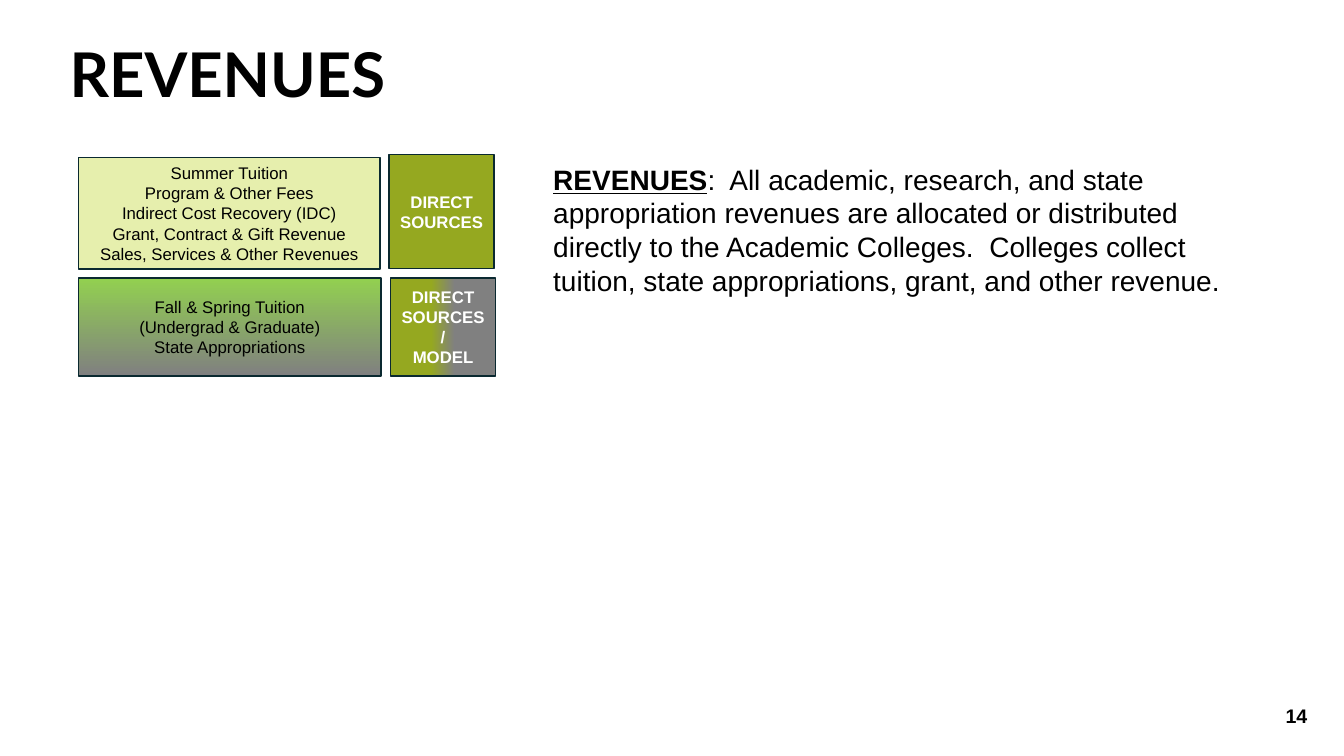
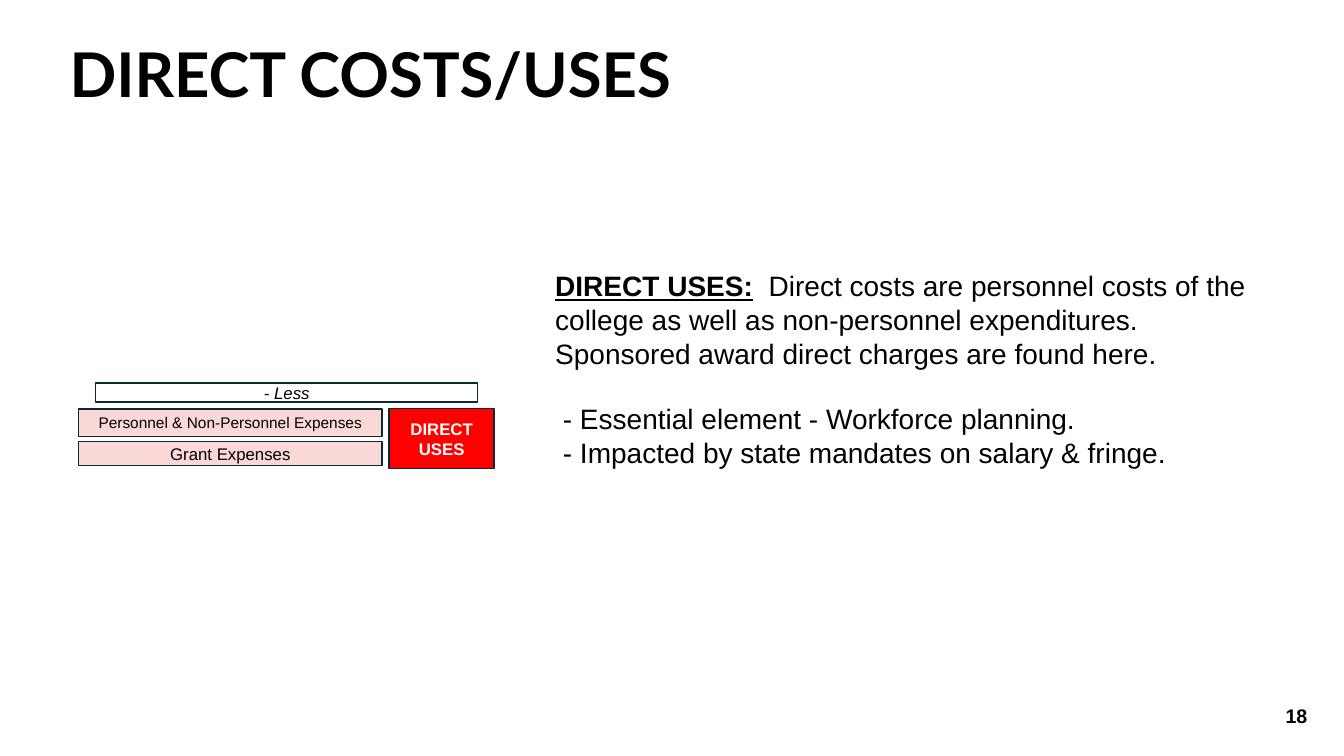
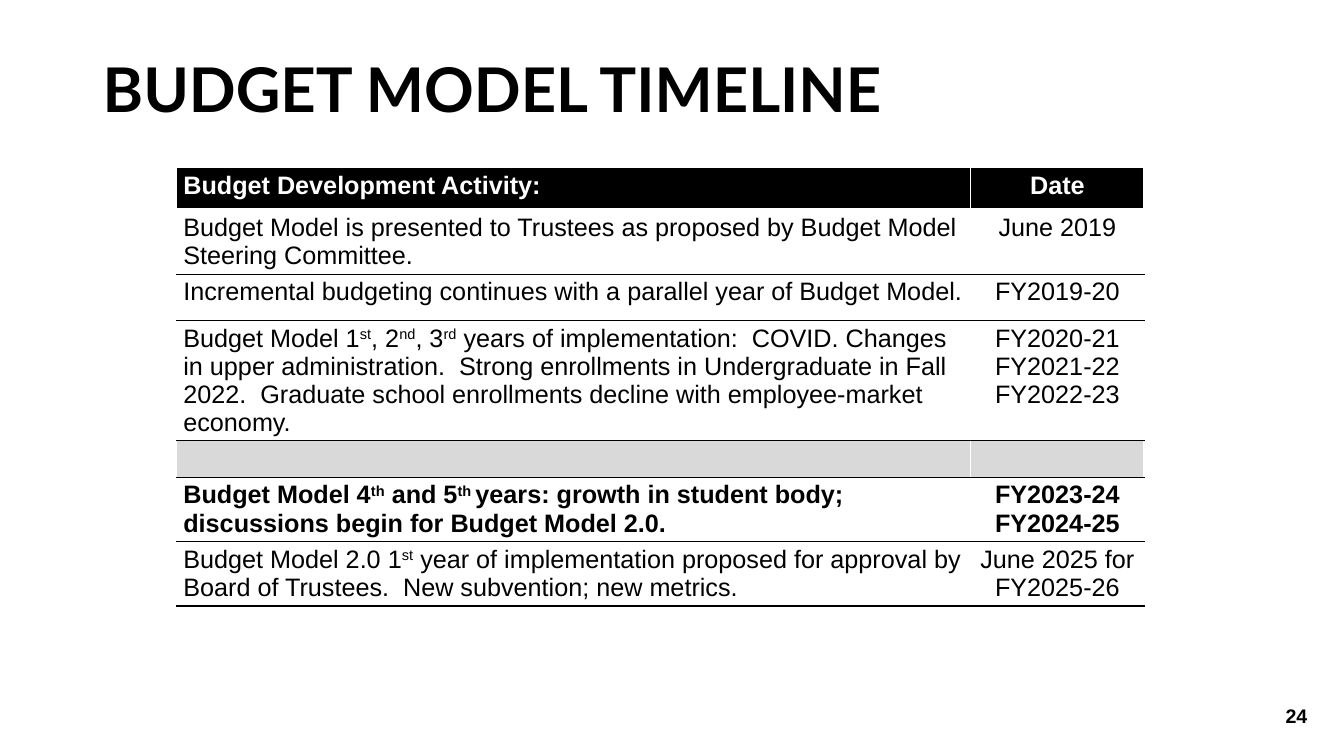
"""Builds three slides on a university budget model: revenues, direct costs and timeline."""
from lxml.etree import SubElement
from pptx import Presentation
from pptx.dml.color import RGBColor
from pptx.enum.shapes import MSO_SHAPE
from pptx.enum.text import MSO_ANCHOR, MSO_AUTO_SIZE, PP_ALIGN
from pptx.oxml.ns import qn
from pptx.util import Pt

COLORS = {
    "black": "000000", "white": "FFFFFF", "outline": "0A2930", "olive": "95A820",
    "pale_green": "E6EFAD", "green": "92D050", "gray": "808080", "red": "FF0000",
    "pink": "F9D8D7", "spacer": "D9D9D9",
}
TITLE = {"size": Pt(44), "name": "Lato", "bold": True}
PAGE_NUMBER = {"size": Pt(14), "bold": True}
BODY = {"size": Pt(20)}
LEAD = {"bold": True, "underline": True}
SOURCE = {"size": Pt(12)}
SMALL = {"size": Pt(11)}
LESS = {"size": Pt(12), "italic": True}
TAG = {"size": Pt(12), "bold": True, "color": "white"}
CELL = {"size": Pt(18)}
STRONG = {"size": Pt(18), "bold": True}
HEADER = {"size": Pt(18), "bold": True, "color": "white"}
SUPERSCRIPT = {"baseline": "30000"}

DOWNWARD = (270, ("green", 0), ("gray", 1))
RIGHTWARD = (0, ("olive", 0.39), ("gray", 0.61))

TITLE_BOX = (42.5, 32.4, 828, 46.1)
TIMELINE_TITLE_BOX = (66.2, 35.3, 828, 61.2)
PAGE_BOX = (725, 496.8, 216, 28.8)
SOURCE_LEFT, TAG_LEFT, TAG_WIDTH = 56.2, 278, 75

DIAGRAM_SLIDES = [
    {
        "title": "REVENUES", "page": "14",
        "boxes": [
            ((SOURCE_LEFT, 112.3, 215.3, 79.9), "pale_green", SOURCE,
             ["Summer Tuition", "Program & Other Fees", "Indirect Cost Recovery (IDC)",
              "Grant, Contract & Gift Revenue", "Sales, Services & Other Revenues"]),
            ((TAG_LEFT, 110.5, TAG_WIDTH, 81.4), "olive", TAG, ["DIRECT SOURCES"]),
            ((SOURCE_LEFT, 198.7, 216, 69.8), DOWNWARD, SOURCE,
             ["Fall & Spring Tuition", "(Undergrad & Graduate)", "State Appropriations"]),
            ((TAG_LEFT + 1, 198.7, TAG_WIDTH, 69.8), RIGHTWARD, TAG,
             ["DIRECT SOURCES/", "MODEL"]),
        ],
        "text_box": (388.1, 112.3, 515.5, 128.2),
        "definition": ["^REVENUES^:  All academic, research, and state appropriation revenues "
                       "are allocated or distributed directly to the Academic Colleges.  "
                       "Colleges collect tuition, state appropriations, grant, and other revenue."],
    },
    {
        "title": "DIRECT COSTS/USES", "page": "18",
        "boxes": [
            ((68.4, 273.6, 272.9, 13.7), "white", LESS, ["- Less"]),
            ((TAG_LEFT, 291.6, TAG_WIDTH, 43.2), "red", TAG, ["DIRECT USES"]),
            ((SOURCE_LEFT, 292.3, 216.7, 19.4), "pink", SMALL,
             ["Personnel & Non-Personnel Expenses"]),
            ((SOURCE_LEFT, 315.4, 216.7, 17.3), "pink", SOURCE, ["Grant Expenses"]),
        ],
        "text_box": (389.5, 188.6, 515.5, 249.8),
        "definition": ["^DIRECT USES:^  Direct costs are personnel costs of the college as well "
                       "as non-personnel expenditures.  Sponsored award direct charges are "
                       "found here.",
                       "- Essential element - Workforce planning.",
                       "- Impacted by state mandates on salary & fringe."],
    },
]

TIMELINE_BOX = (126, 119.9, 691.2, 313)
TIMELINE_COLUMNS = (567.4, 123.8)
TIMELINE = [
    (30, HEADER, "black", "Budget Development Activity:", ["Date"]),
    (46, CELL, None, "Budget Model is presented to Trustees as proposed by Budget Model "
     "Steering Committee.", ["June 2019"]),
    (33, CELL, None, "Incremental budgeting continues with a parallel year of Budget Model.",
     ["FY2019-20"]),
    (86, CELL, None, "Budget Model 1^st^, 2^nd^, 3^rd^ years of implementation:  COVID. Changes "
     "in upper administration.  Strong enrollments in Undergraduate in Fall 2022.  Graduate "
     "school enrollments decline with employee-market economy.",
     ["FY2020-21", "FY2021-22", "FY2022-23"]),
    (26, CELL, "spacer", "", [""]),
    (46, STRONG, None, "Budget Model 4^th^ and 5^th ^years: growth in student body; "
     "discussions begin for Budget Model 2.0.", ["FY2023-24", "FY2024-25"]),
    (46, CELL, None, "Budget Model 2.0 1^st^ year of implementation proposed for approval by "
     "Board of Trustees.  New subvention; new metrics.", ["June 2025 for FY2025-26"]),
]


def rgb(color):
    return RGBColor.from_string(COLORS[color])


def points(box):
    return [Pt(length) for length in box]


def write(frame, texts, style, align=PP_ALIGN.LEFT, marked=None):
    """Fills a frame; text between carets also takes the marked style."""
    frame.word_wrap = True
    for index, text in enumerate(texts):
        paragraph = frame.paragraphs[0] if index == 0 else frame.add_paragraph()
        paragraph.alignment = align
        for part, words in enumerate(text.split("^")):
            run = paragraph.add_run()
            run.text = words
            values = {"name": "Arial", "color": "black", **style}
            if part % 2:
                values.update(marked)
            run.font.color.rgb = rgb(values.pop("color"))
            baseline = values.pop("baseline", None)
            if baseline:
                run.font._element.set("baseline", baseline)
            for key, value in values.items():
                setattr(run.font, key, value)


def add_slide(deck, title, page, title_box=TITLE_BOX):
    slide = deck.slides.add_slide(deck.slide_layouts[5])
    heading = slide.shapes.title
    heading.left, heading.top, heading.width, heading.height = points(title_box)
    number = slide.shapes.add_textbox(*points(PAGE_BOX))
    write(heading.text_frame, [title], TITLE)
    write(number.text_frame, [page], PAGE_NUMBER, PP_ALIGN.RIGHT)
    heading.text_frame.paragraphs[0].line_spacing = 0.9
    for frame in (heading.text_frame, number.text_frame):
        frame.vertical_anchor = MSO_ANCHOR.MIDDLE
        frame.auto_size = MSO_AUTO_SIZE.NONE
    return slide


def paint(fill, paint_value):
    if paint_value is None:
        fill.background()
    elif isinstance(paint_value, str):
        fill.solid()
        fill.fore_color.rgb = rgb(paint_value)
    else:
        angle, *stops = paint_value
        fill.gradient()
        fill.gradient_angle = angle
        for stop, (color, position) in zip(fill.gradient_stops, stops):
            stop.color.rgb = rgb(color)
            stop.position = position


def add_box(slide, box, fill, style, texts):
    block = slide.shapes.add_shape(MSO_SHAPE.RECTANGLE, *points(box))
    block.shadow.inherit = False
    paint(block.fill, fill)
    block.line.color.rgb = rgb("outline")
    block.line.width = Pt(1)
    frame = block.text_frame
    frame.margin_top = frame.margin_bottom = 0
    frame.vertical_anchor = MSO_ANCHOR.MIDDLE
    write(frame, texts, style, PP_ALIGN.CENTER)


def add_definition(slide, box, texts):
    frame = slide.shapes.add_textbox(*points(box)).text_frame
    write(frame, texts, BODY, marked=LEAD)
    for index, point in enumerate(frame.paragraphs[1:]):
        point._p.get_or_add_pPr().set("marL", str(Pt(5.5)))
        point.space_before = Pt(0 if index else 23)


def set_borders(cell, borders):
    properties = cell._tc.get_or_add_tcPr()
    for side, (color, width) in borders.items():
        line = SubElement(properties, qn(f"a:ln{side}"), w=str(Pt(width)))
        SubElement(SubElement(line, qn("a:solidFill")), qn("a:srgbClr"), val=COLORS[color])


def add_timeline(slide):
    table = slide.shapes.add_table(len(TIMELINE), len(TIMELINE_COLUMNS),
                                   *points(TIMELINE_BOX)).table
    table.first_row = table.horz_banding = False
    for column, width in zip(table.columns, TIMELINE_COLUMNS):
        column.width = Pt(width)
    above = ("white", 1)
    for index, (height, style, fill, activity, dates) in enumerate(TIMELINE):
        table.rows[index].height = Pt(height)
        below = ("black", 1) if index else ("white", 3)
        contents = (([activity], PP_ALIGN.LEFT), (dates, PP_ALIGN.CENTER))
        for cell, (texts, align) in zip(table.rows[index].cells, contents):
            cell.margin_left = cell.margin_right = Pt(5)
            cell.margin_top = cell.margin_bottom = Pt(2.7)
            set_borders(cell, {"L": ("white", 1), "R": ("white", 1), "T": above, "B": below})
            paint(cell.fill, fill)
            write(cell.text_frame, texts, style, align, SUPERSCRIPT)
        above = below


def main():
    deck = Presentation()
    deck.slide_width, deck.slide_height = Pt(960), Pt(540)
    for content in DIAGRAM_SLIDES:
        slide = add_slide(deck, content["title"], content["page"])
        for box in content["boxes"]:
            add_box(slide, *box)
        add_definition(slide, content["text_box"], content["definition"])
    add_timeline(add_slide(deck, "BUDGET MODEL TIMELINE", "24", TIMELINE_TITLE_BOX))
    deck.save("out.pptx")


if __name__ == "__main__":
    main()
